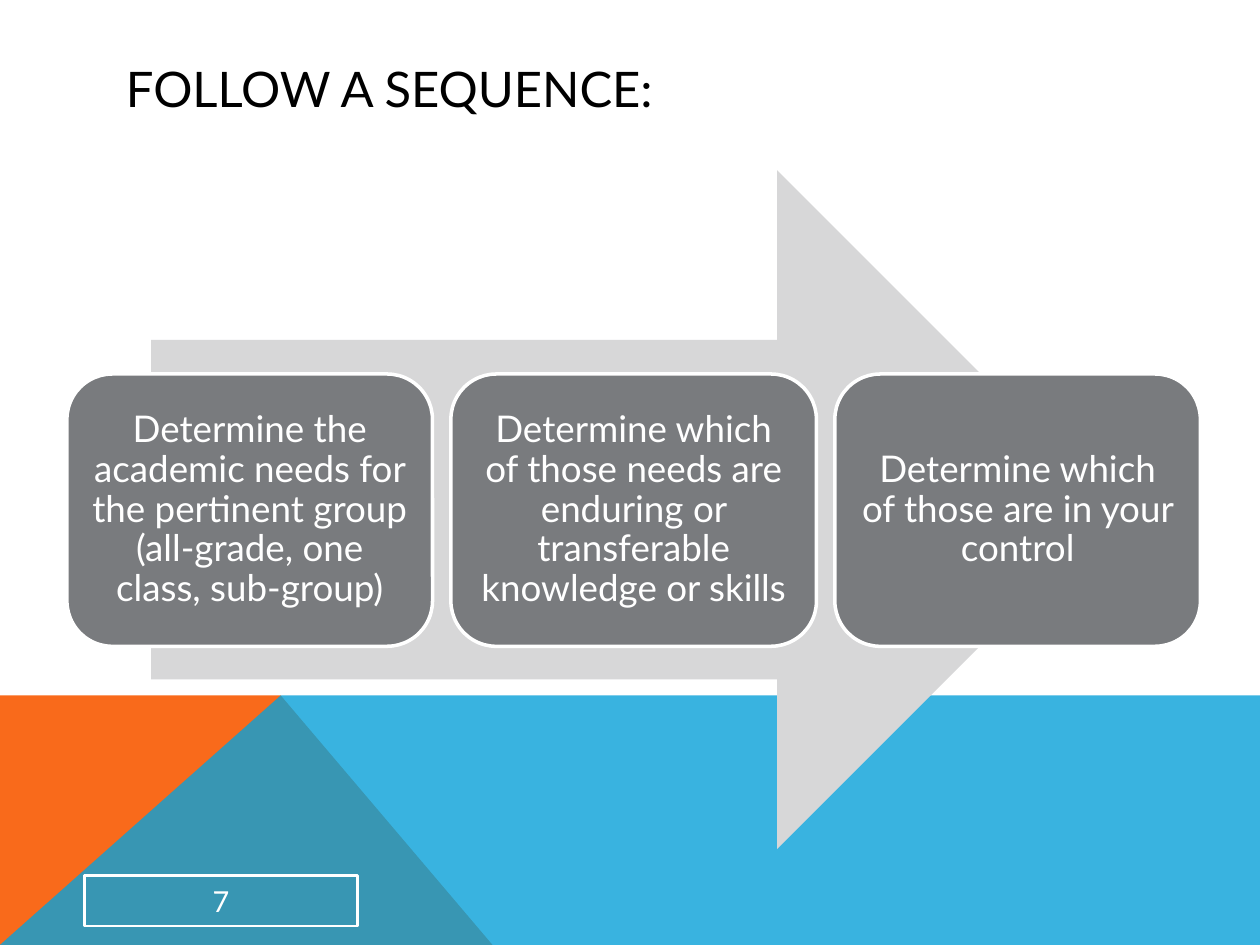
from dataclasses import dataclass

from lxml.etree import SubElement
from pptx import Presentation
from pptx.dml.color import RGBColor
from pptx.enum.shapes import MSO_SHAPE
from pptx.enum.text import MSO_ANCHOR, PP_ALIGN
from pptx.oxml.ns import qn
from pptx.util import Cm, Pt


@dataclass(frozen=True)
class Theme:
    font: str = "Lato"
    black: RGBColor = RGBColor(0x00, 0x00, 0x00)
    white: RGBColor = RGBColor(0xFF, 0xFF, 0xFF)
    orange: RGBColor = RGBColor(0xF9, 0x6A, 0x1B)
    blue: RGBColor = RGBColor(0x08, 0xA1, 0xD9)
    arrow: RGBColor = RGBColor(0xD7, 0xD7, 0xD8)
    card: RGBColor = RGBColor(0x79, 0x7B, 0x7E)
    title_size: float = 28
    card_size: float = 21
    number_size: float = 16.5


@dataclass(frozen=True)
class Box:
    """A rectangle in centimetres."""
    left: float
    top: float
    width: float
    height: float

    def lengths(self) -> tuple:
        return Cm(self.left), Cm(self.top), Cm(self.width), Cm(self.height)


@dataclass(frozen=True)
class Band:
    points: tuple
    color: RGBColor
    opacity: int = 100


THEME = Theme()
SLIDE_WIDTH, SLIDE_HEIGHT = 25.4, 19.05
BAND_TOP, PEAK, ORANGE_RIGHT = 14.02, 5.66, 9.93
BANDS = (
    Band(((0, SLIDE_HEIGHT), (0, BAND_TOP), (PEAK, BAND_TOP),
          (ORANGE_RIGHT, SLIDE_HEIGHT)), THEME.orange),
    Band(((0, SLIDE_HEIGHT), (PEAK, BAND_TOP), (SLIDE_WIDTH, BAND_TOP),
          (SLIDE_WIDTH, SLIDE_HEIGHT)), THEME.blue, 80),
)
STEPS = (
    "Determine the academic needs for the pertinent group (all-grade, one class, sub-group)",
    "Determine which of those needs are enduring or transferable knowledge or skills",
    "Determine which of those are in your control",
)
FIRST_CARD = Box(1.35, 7.54, 7.37, 5.49)
CARD_PITCH = 7.74


def draw_band(slide, band: Band) -> None:
    corners = [(Cm(x), Cm(y)) for x, y in band.points]
    builder = slide.shapes.build_freeform(*corners[0], scale=1.0)
    builder.add_line_segments(corners[1:], close=True)
    shape = builder.convert_to_shape()
    shape.shadow.inherit = False
    shape.fill.solid()
    shape.fill.fore_color.rgb = band.color
    shape.line.fill.background()
    if band.opacity < 100:
        color = shape.element.spPr.find(qn("a:solidFill"))[0]
        SubElement(color, qn("a:alpha"), val=str(band.opacity * 1000))


def draw_shape(slide, kind: MSO_SHAPE, box: Box, fill: RGBColor | None = None,
               line_width: float = 0):
    """Add a preset shape; without a fill it is open, without a line width unlined."""
    shape = slide.shapes.add_shape(kind, *box.lengths())
    shape.shadow.inherit = False
    if fill is None:
        shape.fill.background()
    else:
        shape.fill.solid()
        shape.fill.fore_color.rgb = fill
    if line_width:
        shape.line.color.rgb = THEME.white
        shape.line.width = Pt(line_width)
    else:
        shape.line.fill.background()
    return shape


def write(shape, text: str, size: float, color: RGBColor, align: PP_ALIGN,
          inset: float, line_spacing: float = 1.0) -> None:
    frame = shape.text_frame
    frame.text = text
    frame.word_wrap = True
    frame.vertical_anchor = MSO_ANCHOR.MIDDLE
    frame.margin_left = frame.margin_right = Cm(inset)
    frame.margin_top = frame.margin_bottom = Cm(inset)
    paragraph = frame.paragraphs[0]
    paragraph.alignment = align
    paragraph.line_spacing = line_spacing
    font = paragraph.runs[0].font
    font.name, font.size = THEME.font, Pt(size)
    font.color.rgb = color


def main() -> None:
    presentation = Presentation()
    presentation.slide_width = Cm(SLIDE_WIDTH)
    presentation.slide_height = Cm(SLIDE_HEIGHT)
    slide = presentation.slides.add_slide(presentation.slide_layouts[6])

    for band in BANDS:
        draw_band(slide, band)
    draw_shape(slide, MSO_SHAPE.RIGHT_ARROW, Box(3.05, 3.43, 19.46, 13.69), THEME.arrow)

    for index, step in enumerate(STEPS):
        box = Box(FIRST_CARD.left + index * CARD_PITCH, FIRST_CARD.top,
                  FIRST_CARD.width, FIRST_CARD.height)
        card = draw_shape(slide, MSO_SHAPE.ROUNDED_RECTANGLE, box, THEME.card, 2)
        write(card, step, THEME.card_size, THEME.white, PP_ALIGN.CENTER, 0.23, 0.9)

    number = draw_shape(slide, MSO_SHAPE.RECTANGLE, Box(1.7, 17.65, 5.51, 1.02), line_width=1.5)
    write(number, "7", THEME.number_size, THEME.white, PP_ALIGN.CENTER, 0.03)

    title = slide.shapes.add_textbox(*Box(2.29, 1.02, 20.88, 1.52).lengths())
    write(title, "FOLLOW A SEQUENCE:", THEME.title_size, THEME.black, PP_ALIGN.LEFT, 0.25)

    presentation.save("out.pptx")


if __name__ == "__main__":
    main()
